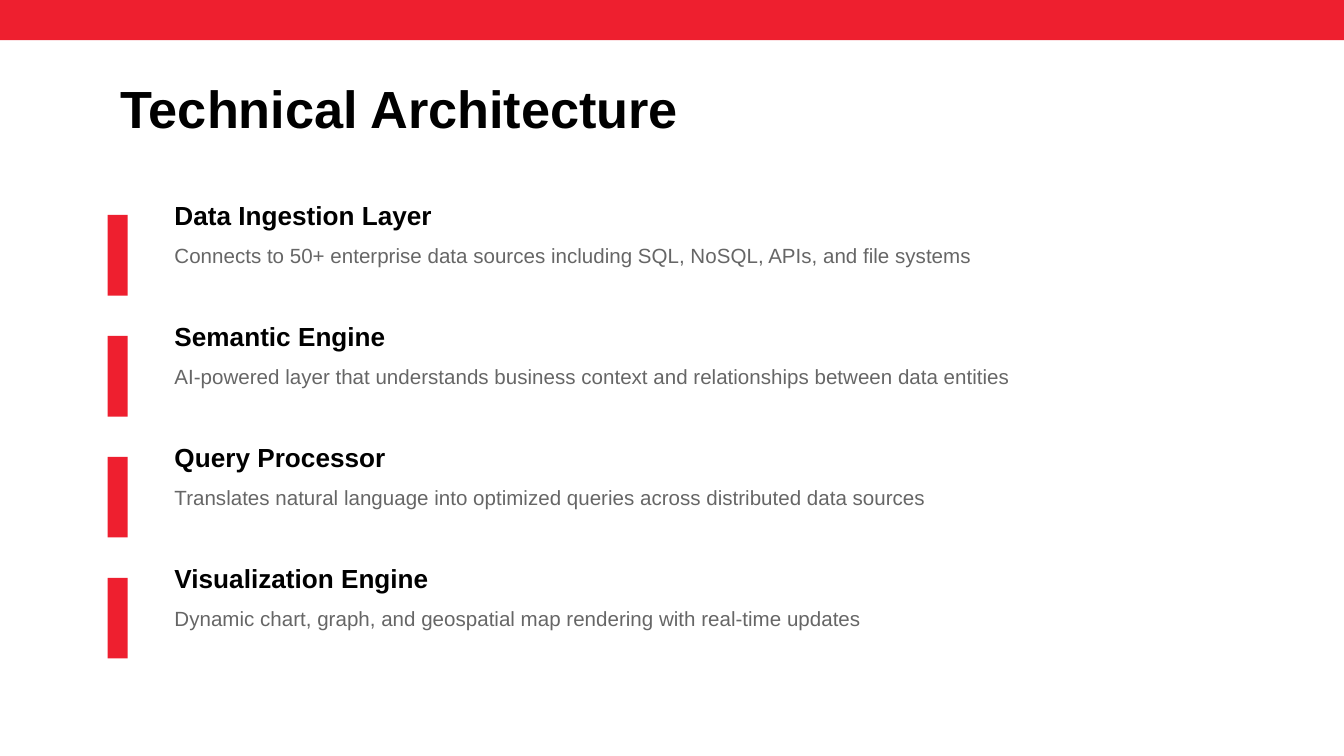
from typing import NamedTuple

from pptx import Presentation
from pptx.dml.color import RGBColor
from pptx.enum.shapes import MSO_SHAPE
from pptx.enum.text import MSO_ANCHOR, MSO_AUTO_SIZE, PP_ALIGN
from pptx.util import Inches, Pt

RECT = MSO_SHAPE.RECTANGLE
MIDDLE = MSO_ANCHOR.MIDDLE
FIXED = MSO_AUTO_SIZE.NONE
LEFT = PP_ALIGN.LEFT

RED = RGBColor(0xEE, 0x1F, 0x2F)
BLACK = RGBColor(0x00, 0x00, 0x00)
GRAY = RGBColor(0x66, 0x66, 0x66)

FONT = "Arial"
PAGE = 10
MARGIN = 0.8
INDENT = 1.2
WIDTH = 8
TOP = 1.6
STEP = 0.9
DROP = 0.3


class Layer(NamedTuple):
    name: str
    detail: str


LAYERS = [
    Layer("Data Ingestion Layer",
          "Connects to 50+ enterprise data sources including SQL, NoSQL, APIs, and file systems"),
    Layer("Semantic Engine",
          "AI-powered layer that understands business context and relationships between data entities"),
    Layer("Query Processor",
          "Translates natural language into optimized queries across distributed data sources"),
    Layer("Visualization Engine",
          "Dynamic chart, graph, and geospatial map rendering with real-time updates"),
]


def add_bar(slide, left: float, top: float, width: float, height: float) -> None:
    bar = slide.shapes.add_shape(
        RECT, Inches(left), Inches(top), Inches(width), Inches(height))
    bar.shadow.inherit = False
    bar.fill.solid()
    bar.fill.fore_color.rgb = RED
    bar.line.fill.background()


def write(shape, text: str, *, size: int, color: RGBColor = BLACK,
          bold: bool = False) -> None:
    frame = shape.text_frame
    frame.text = text
    frame.word_wrap = True
    frame.auto_size = FIXED
    frame.vertical_anchor = MIDDLE
    line = frame.paragraphs[0]
    line.alignment = LEFT
    font = line.font
    font.name = FONT
    font.size = Pt(size)
    font.bold = bold
    font.color.rgb = color


def add_text(slide, middle: float, text: str, height: float = 0.3, **style) -> None:
    box = slide.shapes.add_textbox(
        Inches(INDENT), Inches(middle - height / 2), Inches(WIDTH), Inches(height))
    write(box, text, **style)


def add_title(slide, text: str) -> None:
    title = slide.shapes.title
    title.left, title.top = Inches(MARGIN), Inches(0.5)
    title.width, title.height = Inches(WIDTH), Inches(0.6)
    write(title, text, size=28, bold=True)


def add_layer(slide, layer: Layer, top: float) -> None:
    add_bar(slide, MARGIN, top, 0.15, 0.6)
    add_text(slide, top, layer.name, size=14, bold=True)
    add_text(slide, top + DROP, layer.detail, size=11, color=GRAY)


def main() -> None:
    deck = Presentation()
    deck.slide_width, deck.slide_height = Inches(PAGE), Inches(PAGE * 9 / 16)
    slide = deck.slides.add_slide(deck.slide_layouts.get_by_name("Title Only"))
    add_bar(slide, 0, 0, PAGE, 0.3)
    add_title(slide, "Technical Architecture")
    for row, layer in enumerate(LAYERS):
        add_layer(slide, layer, TOP + row * STEP)
    deck.save("out.pptx")


if __name__ == "__main__":
    main()
